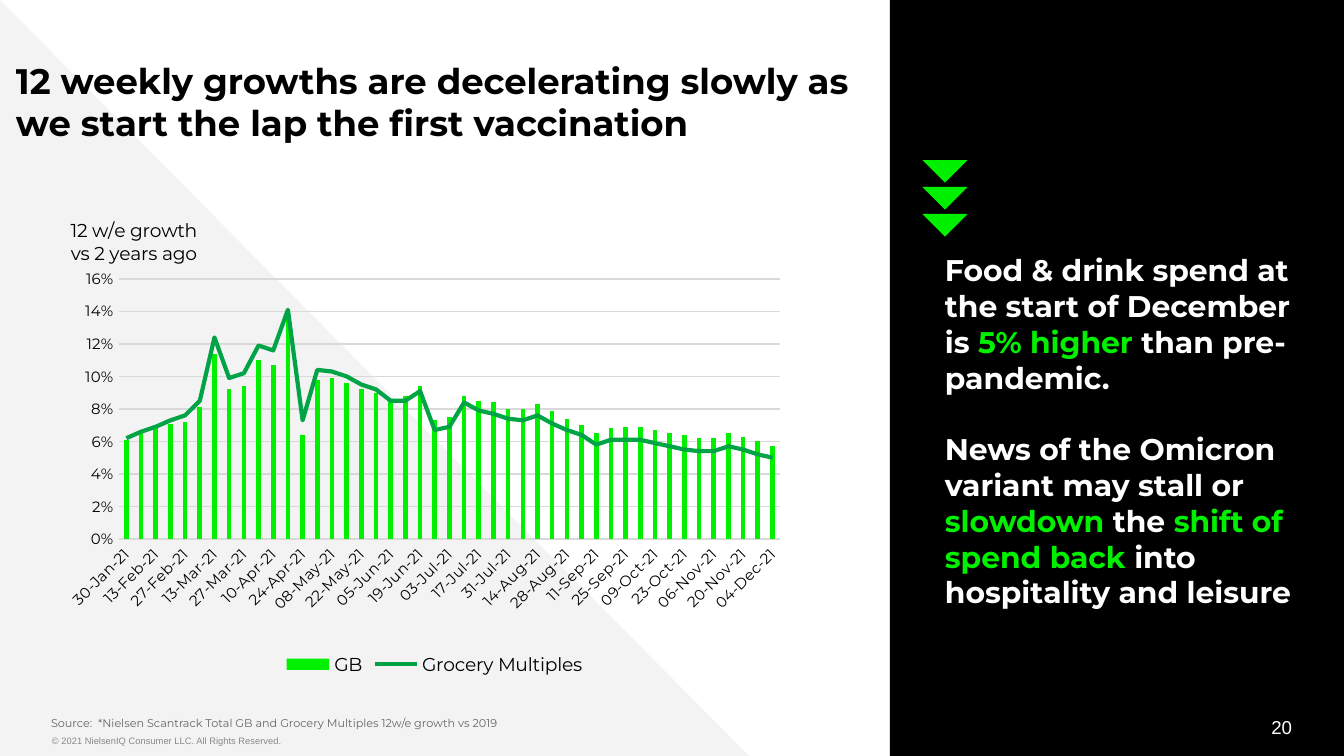
from dataclasses import dataclass
from typing import NamedTuple

from lxml.etree import SubElement
from pptx import Presentation
from pptx.chart.chart import Chart
from pptx.chart.data import CategoryChartData
from pptx.dml.color import RGBColor
from pptx.enum.chart import XL_CHART_TYPE as ChartType, XL_LEGEND_POSITION as LegendPosition
from pptx.enum.chart import XL_MARKER_STYLE as MarkerStyle, XL_TICK_MARK as TickMark
from pptx.enum.shapes import MSO_SHAPE as Preset
from pptx.enum.text import MSO_ANCHOR as Anchor, PP_ALIGN as Align
from pptx.oxml import parse_xml
from pptx.oxml.ns import nsdecls, qn
from pptx.slide import Slide
from pptx.util import Emu, Pt

PX_PER_INCH = 134.4

@dataclass(frozen=True)
class Theme:
    black: RGBColor = RGBColor(0x00, 0x00, 0x00)
    white: RGBColor = RGBColor(0xFF, 0xFF, 0xFF)
    wedge: RGBColor = RGBColor(0xF3, 0xF3, 0xF3)
    lime: RGBColor = RGBColor(0x00, 0xF0, 0x00)
    green: RGBColor = RGBColor(0x00, 0xA3, 0x46)
    grid: RGBColor = RGBColor(0xD9, 0xD9, 0xD9)
    source: RGBColor = RGBColor(0x66, 0x66, 0x66)
    legal: RGBColor = RGBColor(0x88, 0x88, 0x88)
    font: str = "Montserrat"
    legal_font: str = "Arial"
    title_size: int = 19
    message_size: int = 16
    chart_size: int = 10
    tick_size: int = 8
    source_size: int = 6
    legal_size: int = 5

THEME = Theme()

class Box(NamedTuple):
    left: int
    top: int
    width: int
    height: int

class Panel(NamedTuple):
    preset: Preset
    box: Box
    color: RGBColor
    rotation: int = 0

class Words(NamedTuple):
    text: str
    color: RGBColor

@dataclass(frozen=True)
class TextBlock:
    box: Box
    paragraphs: list[list[Words]]
    size: int
    font: str = THEME.font
    bold: bool = False
    inset: int = 7
    gap: int = 0
    anchor: Anchor = Anchor.TOP
    align: Align = Align.LEFT

PANELS = [
    Panel(Preset.RECTANGLE, Box(890, -3, 461, 761), THEME.black),
    Panel(Preset.RIGHT_TRIANGLE, Box(0, 0, 751, 758), THEME.wedge),
    *(Panel(Preset.RIGHT_TRIANGLE, Box(929, 144 + 27 * row, 32, 32), THEME.lime, 315) for row in range(3)),
]
MESSAGE = [
    [Words("Food & drink spend at the start of December is ", THEME.white),
     Words("5% higher ", THEME.lime), Words("than pre-pandemic.", THEME.white)],
    [Words("News of the Omicron variant may stall or ", THEME.white), Words("slowdown", THEME.lime),
     Words(" the ", THEME.white), Words("shift of spend back ", THEME.lime),
     Words("into hospitality and leisure", THEME.white)],
]
TITLE = "12 weekly growths are decelerating slowly as we start the lap the first vaccination"
SOURCE = "Source:  *Nielsen Scantrack Total GB and Grocery Multiples 12w/e growth vs 2019"
LEGAL = "© 2021 NielsenIQ Consumer LLC. All Rights Reserved."
TEXTS = [
    TextBlock(Box(52, 730, 745, 27), [[Words(LEGAL, THEME.legal)]], THEME.legal_size, THEME.legal_font),
    TextBlock(Box(989, 707, 303, 40), [[Words("20", THEME.white)]], THEME.chart_size, THEME.legal_font,
              anchor=Anchor.MIDDLE, align=Align.RIGHT),
    TextBlock(Box(945, 245, 357, 375), MESSAGE, THEME.message_size, bold=True, gap=19),
    TextBlock(Box(16, 46, 874, 77), [[Words(TITLE, THEME.black)]], THEME.title_size, bold=True, inset=13),
    TextBlock(Box(51, 710, 816, 27), [[Words(SOURCE, THEME.source)]], THEME.source_size, inset=13,
              anchor=Anchor.BOTTOM),
]
CHART_BOX = Box(59, 208, 751, 473)
WEEKS = """30-Jan-21 06-Feb-21 13-Feb-21 20-Feb-21 27-Feb-21 06-Mar-21 13-Mar-21 20-Mar-21 27-Mar-21
    03-Apr-21 10-Apr-21 17-Apr-21 24-Apr-21 01-May-21 08-May-21 15-May-21 22-May-21 29-May-21 05-Jun-21
    12-Jun-21 19-Jun-21 26-Jun-21 03-Jul-21 10-Jul-21 17-Jul-21 24-Jul-21 31-Jul-21 07-Aug-21 14-Aug-21
    21-Aug-21 28-Aug-21 04-Sep-21 11-Sep-21 18-Sep-21 25-Sep-21 02-Oct-21 09-Oct-21 16-Oct-21 23-Oct-21
    30-Oct-21 06-Nov-21 13-Nov-21 20-Nov-21 27-Nov-21 04-Dec-21""".split()
GROWTH_PER_MILLE = {
    "GB": [61, 65, 68, 71, 72, 81, 114, 92, 94, 110, 107, 136, 64, 98, 99, 96, 92, 90, 86, 88, 94, 73, 75,
           88, 85, 84, 80, 80, 83, 79, 74, 70, 65, 68, 69, 69, 67, 65, 64, 62, 62, 65, 63, 60, 57],
    "Grocery Multiples": [62, 66, 69, 73, 76, 85, 124, 99, 102, 119, 116, 141, 73, 104, 103, 100, 95, 92,
                          85, 85, 91, 67, 69, 84, 79, 77, 74, 73, 76, 71, 67, 64, 58, 61, 61, 61, 59, 57,
                          55, 54, 54, 57, 55, 52, 50],
}

def px(length: int) -> Emu:
    return Emu(round(length * 914400 / PX_PER_INCH))

def style_font(font, size: int, color: RGBColor, name: str = THEME.font, bold: bool = False) -> None:
    font.size, font.name, font.bold = Pt(size), name, bold
    font.color.rgb = color

def draw_panel(slide: Slide, panel: Panel) -> None:
    shape = slide.shapes.add_shape(panel.preset, *map(px, panel.box))
    shape.shadow.inherit = False
    shape.fill.solid()
    shape.fill.fore_color.rgb = panel.color
    shape.line.fill.background()
    shape.rotation = panel.rotation

def draw_text(slide: Slide, block: TextBlock) -> None:
    frame = slide.shapes.add_textbox(*map(px, block.box)).text_frame
    frame.word_wrap = True
    frame.vertical_anchor = block.anchor
    frame.margin_left = frame.margin_right = 0
    frame.margin_top = frame.margin_bottom = px(block.inset)
    for index, words in enumerate(block.paragraphs):
        paragraph = frame.add_paragraph() if index else frame.paragraphs[0]
        paragraph.alignment = block.align
        if index:
            paragraph.space_before = Pt(block.gap)
        for part in words:
            run = paragraph.add_run()
            run.text = part.text
            style_font(run.font, block.size, part.color, block.font, block.bold)

def set_layout(parent, position: int, inner: bool = False, **fractions: float) -> None:
    """Place a chart part by fractions of the chart's size."""
    for automatic in parent.findall(qn("c:layout")):
        parent.remove(automatic)
    target = '<c:layoutTarget val="inner"/>' if inner else ""
    values = "".join(f'<c:{key} val="{value}"/>' for key, value in fractions.items())
    parent.insert(position, parse_xml(
        f'<c:layout {nsdecls("c")}><c:manualLayout>{target}<c:xMode val="edge"/><c:yMode val="edge"/>'
        f"{values}</c:manualLayout></c:layout>"))

def turn_last_series_into_line(chart: Chart) -> None:
    bars = chart.plots[0]._element
    series = bars.findall(qn("c:ser"))[-1]
    for bar_only in series.findall(qn("c:invertIfNegative")):
        series.remove(bar_only)
    axes = "".join(f'<c:axId val="{axis.get("val")}"/>' for axis in bars.findall(qn("c:axId")))
    lines = parse_xml(f'<c:lineChart {nsdecls("c")}><c:grouping val="standard"/><c:varyColors val="0"/>'
                      f'<c:marker val="1"/>{axes}</c:lineChart>')
    lines.insert(2, series)
    bars.addnext(lines)

def style_axes(chart: Chart) -> None:
    weeks, growth = chart.category_axis, chart.value_axis
    for axis, line in ((weeks, weeks.format.line), (growth, growth.major_gridlines.format.line)):
        axis.major_tick_mark = axis.minor_tick_mark = TickMark.NONE
        style_font(axis.tick_labels.font, THEME.tick_size, THEME.black)
        line.color.rgb, line.width = THEME.grid, Pt(0.75)
    growth.format.line.fill.background()
    growth.minimum_scale, growth.maximum_scale, growth.major_unit = 0, 0.16, 0.02
    growth.tick_labels.number_format, growth.tick_labels.number_format_is_linked = "0%", False
    weeks._element.find(f'{qn("c:txPr")}/{qn("a:bodyPr")}').set("rot", "-2700000")
    skip = SubElement(weeks._element, qn("c:tickLblSkip"), val="2")
    for following in weeks._element.findall(qn("c:noMultiLvlLbl")):
        following.addprevious(skip)
    heading = growth.axis_title.text_frame
    for index, text in enumerate(("12 w/e growth", "vs 2 years ago")):
        run = (heading.add_paragraph() if index else heading.paragraphs[0]).add_run()
        run.text = text
        style_font(run.font, THEME.chart_size, THEME.black)
    title = growth.axis_title._element
    title.find(f'.//{qn("a:bodyPr")}').set("rot", "0")
    set_layout(title, 1, x=0.01, y=0.01)

def draw_growth_chart(slide: Slide) -> None:
    data = CategoryChartData(number_format="0.0%")
    data.categories = WEEKS
    for name, growth in GROWTH_PER_MILLE.items():
        data.add_series(name, [value / 1000 for value in growth])
    chart = slide.shapes.add_chart(ChartType.COLUMN_CLUSTERED, *map(px, CHART_BOX), data).chart
    style_font(chart.font, THEME.chart_size, THEME.black)
    chart.has_title, chart.has_legend = False, True
    chart.legend.position, chart.legend.include_in_layout = LegendPosition.BOTTOM, False
    style_font(chart.legend.font, THEME.chart_size, THEME.black)
    turn_last_series_into_line(chart)
    style_axes(chart)
    columns, lines = chart.plots
    columns.gap_width, columns.vary_by_categories = 219, False
    columns.series[0].format.fill.solid()
    columns.series[0].format.fill.fore_color.rgb = THEME.lime
    multiples = lines.series[0]
    multiples.smooth, multiples.marker.style = False, MarkerStyle.NONE
    multiples.format.line.color.rgb, multiples.format.line.width = THEME.green, Pt(2.25)
    set_layout(columns._element.getparent(), 0, inner=True, x=0.08, y=0.15, w=0.88, h=0.55)

deck = Presentation()
deck.slide_width, deck.slide_height = px(1344), px(756)
slide = deck.slides.add_slide(deck.slide_layouts[6])
for panel in PANELS:
    draw_panel(slide, panel)
for block in TEXTS:
    draw_text(slide, block)
draw_growth_chart(slide)
deck.save("out.pptx")
